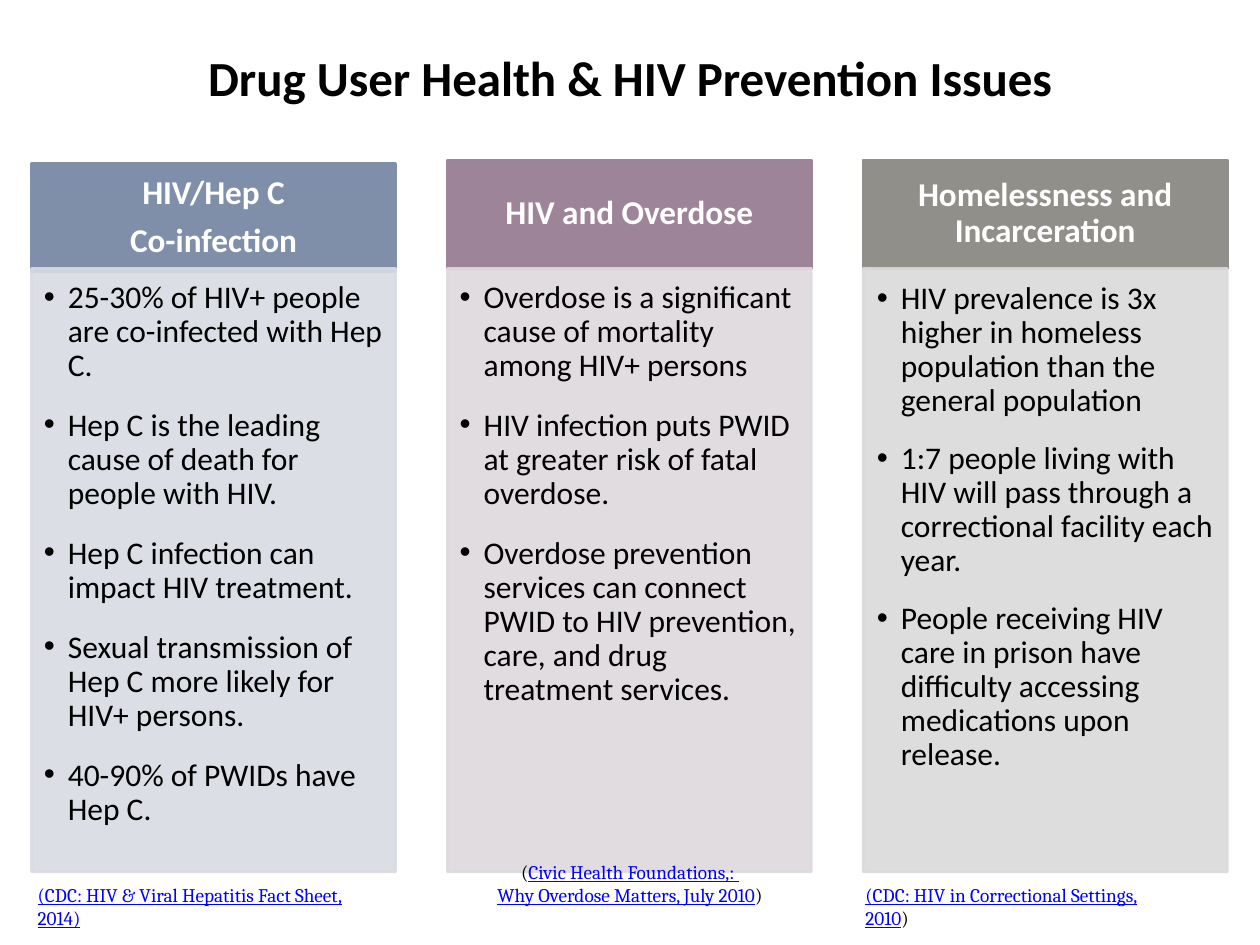
from dataclasses import dataclass

from lxml.etree import SubElement
from pptx import Presentation
from pptx.dml.color import RGBColor
from pptx.enum.shapes import MSO_SHAPE
from pptx.enum.text import MSO_ANCHOR, PP_ALIGN
from pptx.oxml.ns import qn
from pptx.slide import Slide
from pptx.util import Inches, Pt

BLACK = RGBColor(0x00, 0x00, 0x00)
WHITE = RGBColor(0xFF, 0xFF, 0xFF)
LINK_BLUE = RGBColor(0x00, 0x00, 0xFF)
SLATE = RGBColor(0x7F, 0x8F, 0xA9)
SLATE_TINT = RGBColor(0xD8, 0xDB, 0xE2)
MAUVE = RGBColor(0x9D, 0x84, 0x98)
MAUVE_TINT = RGBColor(0xDE, 0xD9, 0xDD)
STONE = RGBColor(0x90, 0x8F, 0x8A)
STONE_TINT = RGBColor(0xDA, 0xDA, 0xDA)

COLUMN_LEFT, COLUMN_STEP, COLUMN_WIDTH = 0.25, 3.3, 2.89
HEADING_HEIGHT, LIST_TOP, LIST_HEIGHT = 0.86, 2.13, 4.79

ISSUES = [
    {
        "heading": ["HIV/Hep C", "Co-infection"],
        "heading_top": 1.3,
        "colors": (SLATE, SLATE_TINT),
        "inset": 0.1,
        "gap": 11.8,
        "points": [
            "25-30% of HIV+ people are co-infected with Hep C.",
            "Hep C is the leading cause of death for people with HIV.",
            "Hep C infection can impact HIV treatment.",
            "Sexual transmission of Hep C more likely for HIV+ persons.",
            "40-90% of PWIDs have Hep C.",
        ],
    },
    {
        "heading": ["HIV and Overdose"],
        "heading_top": 1.27,
        "colors": (MAUVE, MAUVE_TINT),
        "inset": 0.1,
        "gap": 11.8,
        "points": [
            "Overdose is a significant cause of mortality among HIV+ persons",
            "HIV infection puts PWID at greater risk of fatal overdose.",
            "Overdose prevention services can connect PWID to HIV prevention, "
            "care, and drug treatment services.",
        ],
    },
    {
        "heading": ["Homelessness and Incarceration"],
        "heading_top": 1.27,
        "colors": (STONE, STONE_TINT),
        "inset": 0.11,
        "gap": 10.7,
        "points": [
            "HIV prevalence is 3x higher in homeless population than the "
            "general population",
            "1:7 people living with HIV will pass through a correctional "
            "facility each year.",
            "People receiving HIV care in prison have difficulty accessing "
            "medications upon release.",
        ],
    },
]

CITATIONS = [
    ((0.2, 6.96, 2.95, 0.47), PP_ALIGN.LEFT,
     [[("(CDC: HIV & Viral Hepatitis Fact Sheet, 2014)", True)]]),
    ((3.8, 6.78, 2.4, 0.47), PP_ALIGN.CENTER,
     [[("(", False), ("Civic Health Foundations,: ", True)],
      [("Why Overdose Matters, July 2010", True), (")", False)]]),
    ((6.77, 6.96, 2.73, 0.47), PP_ALIGN.LEFT,
     [[("(CDC: HIV in Correctional Settings, 2010", True), (")", False)]]),
]


def apply(target, values):
    for name, value in values.items():
        setattr(target, name, value)


@dataclass
class IssueSlide:
    slide: Slide
    font: str = "Calibri"
    citation_font: str = "Cambria"

    def style_run(self, run, size, color, **values):
        apply(run.font, {"name": self.font, "size": Pt(size), **values})
        run.font.color.rgb = color

    def set_frame(self, frame, inset, anchor):
        sides = ("left", "top", "right", "bottom")
        margins = {f"margin_{side}": Inches(inset) for side in sides}
        apply(frame, {"word_wrap": True, "vertical_anchor": anchor, **margins})

    def add_title(self, wording):
        title = self.slide.shapes.title
        place = dict(zip(("left", "top", "width", "height"),
                         map(Inches, (0.75, 0.25, 8.5, 0.72))))
        apply(title, place)
        self.set_frame(title.text_frame, 0.05, MSO_ANCHOR.MIDDLE)
        paragraph = title.text_frame.paragraphs[0]
        paragraph.alignment = PP_ALIGN.CENTER
        run = paragraph.add_run()
        run.text = wording
        self.style_run(run, 28, BLACK, bold=True)

    def add_panel(self, box, color, inset, anchor, opacity=None):
        panel = self.slide.shapes.add_shape(MSO_SHAPE.RECTANGLE, *map(Inches, box))
        panel.shadow.inherit = False
        panel.fill.solid()
        panel.line.width = Pt(1.5)
        for paint in (panel.fill.fore_color, panel.line.color):
            paint.rgb = color
        if opacity:
            for tone in panel.element.spPr.iter(qn("a:srgbClr")):
                SubElement(tone, qn("a:alpha"), val=str(opacity * 1000))
        self.set_frame(panel.text_frame, inset, anchor)
        return panel.text_frame

    def fill_panel(self, frame, lines, size, color, bold, layout):
        frame.text = "\n".join(lines)
        for paragraph in frame.paragraphs:
            apply(paragraph, {"line_spacing": 0.9, **layout})
            self.style_run(paragraph.runs[0], size, color, bold=bold)

    def add_heading(self, box, color, lines):
        frame = self.add_panel(box, color, 0.08, MSO_ANCHOR.MIDDLE)
        layout = {"alignment": PP_ALIGN.CENTER, "space_before": Pt(7)}
        self.fill_panel(frame, lines, 19, WHITE, True, layout)

    def add_points(self, box, color, points, inset, gap):
        frame = self.add_panel(box, color, inset, MSO_ANCHOR.TOP, opacity=90)
        layout = {"alignment": PP_ALIGN.LEFT, "space_before": Pt(3),
                  "space_after": Pt(gap)}
        self.fill_panel(frame, points, 18, BLACK, False, layout)
        indent = Inches(0.19)
        for paragraph in frame.paragraphs:
            properties = paragraph._p.get_or_add_pPr()
            properties.set("marL", str(indent))
            properties.set("indent", str(-indent))
            SubElement(properties, qn("a:buFont"), typeface="Arial")
            SubElement(properties, qn("a:buChar"), char="•")

    def add_citation(self, box, alignment, lines):
        citation = self.slide.shapes.add_textbox(*map(Inches, box))
        citation.text_frame.word_wrap = True
        paragraph = citation.text_frame.paragraphs[0]
        paragraph.alignment = alignment
        for number, line in enumerate(lines):
            if number:
                paragraph.add_line_break()
            for wording, linked in line:
                run = paragraph.add_run()
                run.text = wording
                self.style_run(run, 11, LINK_BLUE if linked else BLACK,
                               name=self.citation_font, underline=linked)


def main():
    presentation = Presentation()
    apply(presentation, {"slide_width": Inches(10), "slide_height": Inches(7.5)})
    page = IssueSlide(presentation.slides.add_slide(presentation.slide_layouts[5]))
    page.add_title("Drug User Health & HIV Prevention Issues")
    for index, issue in enumerate(ISSUES):
        left = COLUMN_LEFT + index * COLUMN_STEP
        heading_color, list_color = issue["colors"]
        page.add_heading((left, issue["heading_top"], COLUMN_WIDTH, HEADING_HEIGHT),
                         heading_color, issue["heading"])
        page.add_points((left, LIST_TOP, COLUMN_WIDTH, LIST_HEIGHT),
                        list_color, issue["points"], issue["inset"], issue["gap"])
    for citation in CITATIONS:
        page.add_citation(*citation)
    presentation.save("out.pptx")


if __name__ == "__main__":
    main()
